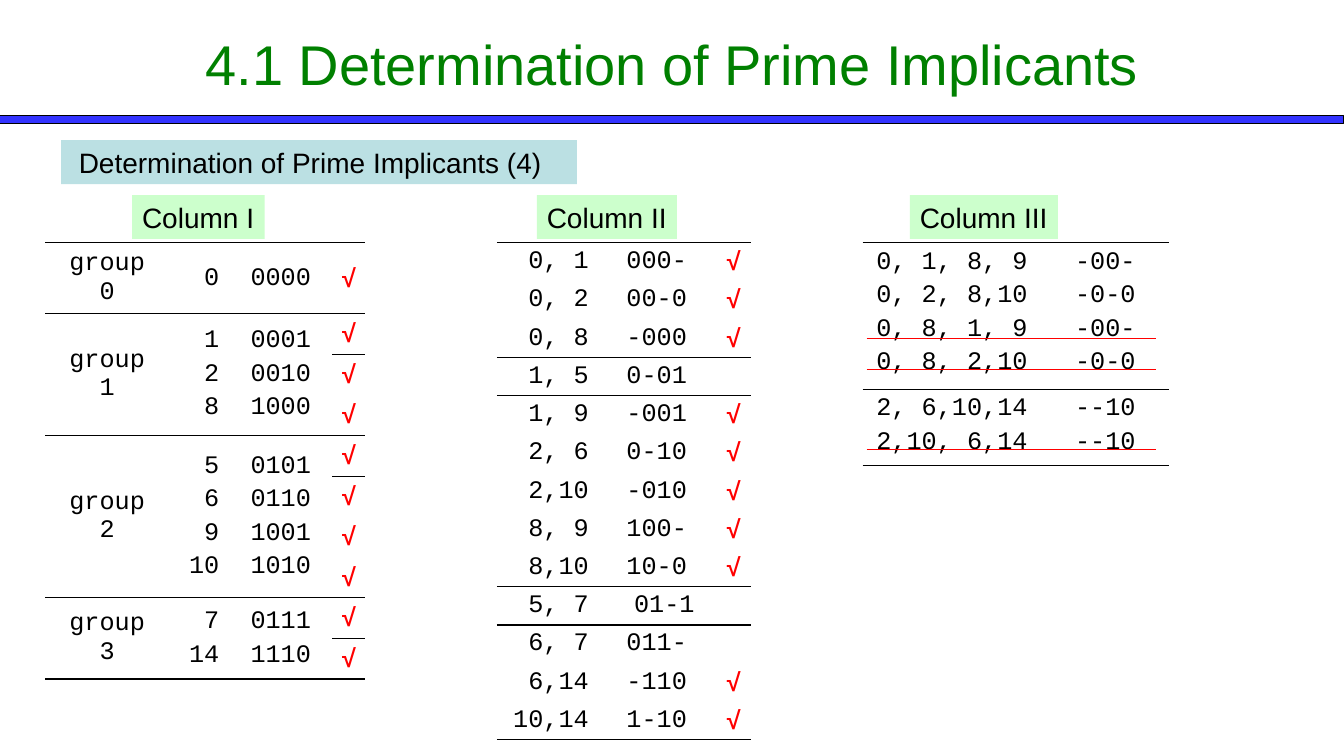
from lxml.etree import SubElement
from pptx import Presentation
from pptx.dml.color import RGBColor
from pptx.enum.shapes import MSO_CONNECTOR, MSO_SHAPE
from pptx.enum.text import MSO_ANCHOR, PP_ALIGN
from pptx.oxml import parse_xml
from pptx.oxml.ns import nsdecls, qn
from pptx.util import Cm, Pt

NO_GRID_STYLE = "{2D5ABB26-0587-4C30-8999-92F81FD0307C}"
LEFT, CENTER, RIGHT = PP_ALIGN.LEFT, PP_ALIGN.CENTER, PP_ALIGN.RIGHT


def color(value):
    return RGBColor.from_string(value)


def style_text(frame, size, value, align, font="Arial", bold=False, space=0):
    for paragraph in frame.paragraphs:
        paragraph.alignment = align
        paragraph.space_before = Pt(space)
        for span in paragraph.runs:
            span.font.name = font
            span.font.size = Pt(size)
            span.font.bold = bold
            span.font.color.rgb = color(value)


deck = Presentation()
deck.slide_width, deck.slide_height = Cm(33.87), Cm(19.05)
page = deck.slides.add_slide(deck.slide_layouts[6])

rule = page.shapes.add_shape(MSO_SHAPE.RECTANGLE, 0, Cm(2.91), deck.slide_width, Cm(0.21))
rule.shadow.inherit = False
rule.fill.solid()
rule.fill.fore_color.rgb = color("3333FF")
rule.line.color.rgb = color("000000")
rule.line.width = Pt(0.75)

title = page.shapes.add_textbox(Cm(4.23), 0, Cm(25.4), Cm(3.18))
title.text_frame.word_wrap = True
title.text_frame.vertical_anchor = MSO_ANCHOR.MIDDLE
title.text_frame.text = "4.1 Determination of Prime Implicants"
style_text(title.text_frame, 40, "008000", CENTER)

labels = [
    (" Determination of Prime Implicants (4)", 1.54, 3.53, 13, 1.11, "BBE0E3", True),
    ("Column I", 3.33, 4.92, 3.34, 1.1, "CCFFCC", False),
    ("Column II", 13.53, 4.92, 3.53, 1.1, "CCFFCC", False),
    ("Column III", 22.93, 4.92, 3.73, 1.1, "CCFFCC", False),
]
for text, left, top, width, height, fill, wrap in labels:
    label = page.shapes.add_textbox(Cm(left), Cm(top), Cm(width), Cm(height))
    label.fill.solid()
    label.fill.fore_color.rgb = color(fill)
    label.text_frame.word_wrap = wrap
    label.text_frame.text = text
    style_text(label.text_frame, 20, "000000", LEFT)

column_one = [
    [["group 0"], ["0"], ["0000"], ["√"]],
    [["group 1"], ["1\n2\n8"], ["0001\n0010\n1000"], ["√"] * 3],
    [["group 2"], ["5\n6\n9\n10"], ["0101\n0110\n1001\n1010"], ["√"] * 4],
    [["group 3"], ["7\n14"], ["0111\n1110"], ["√"] * 2],
]
column_two = [
    [["0, 1", "0, 2", "0, 8"], ["000-", "00-0", "-000"], ["√"] * 3],
    [["1, 5", "1, 9", "2, 6", "2,10", "8, 9", "8,10"],
     ["0-01", "-001", "0-10", "-010", "100-", "10-0"],
     [""] + ["√"] * 5],
    [["5, 7", "6, 7", "6,14", "10,14"],
     [" 01-1", "011-", "-110", "1-10"],
     ["", "", "√", "√"]],
]
column_three = [
    [["0, 1, 8, 9\n0, 2, 8,10\n0, 8, 1, 9\n0, 8, 2,10"], ["-00-\n-0-0\n-00-\n-0-0"]],
    [["2, 6,10,14\n2,10, 6,14"], ["--10\n--10"]],
]
grids = [
    (column_one, 1.14, [3.12, 1.52, 2.59, 0.84], [1.7] + [0.97] * 9,
     [CENTER, RIGHT, CENTER, CENTER], MSO_ANCHOR.MIDDLE, 0.13),
    (column_two, 12.52, [2.57, 2.92, 0.91], [0.92] * 13,
     [RIGHT, CENTER, RIGHT], MSO_ANCHOR.MIDDLE, 0.1),
    (column_three, 21.74, [4.5, 3.23], [3.68, 1.92],
     [CENTER, CENTER], MSO_ANCHOR.TOP, 0.13),
]
for groups, left, widths, heights, aligns, anchor, inset in grids:
    frame = page.shapes.add_table(len(heights), len(widths), Cm(left), Cm(6.12),
                                  Cm(sum(widths)), Cm(sum(heights)))
    table = frame.table
    table.first_row = table.horz_banding = False
    frame._element.find(".//" + qn("a:tableStyleId")).text = NO_GRID_STYLE
    for column, width in zip(table.columns, widths):
        column.width = Cm(width)
    for row, height in zip(table.rows, heights):
        row.height = Cm(height)

    first = 0
    for group in groups:
        last = first + max(len(texts) for texts in group) - 1
        for index, texts in enumerate(group):
            merged = first + len(texts) - 1 < last
            if merged:
                table.cell(first, index).merge(table.cell(last, index))
            for row in range(first, last + 1):
                cell = table.cell(row, index)
                borders = []
                if row == first:
                    borders.append("a:lnT")
                if row == last or merged and row == first:
                    borders.append("a:lnB")
                for side in borders:
                    border = SubElement(cell._tc.get_or_add_tcPr(), qn(side), w=str(Pt(1)))
                    solid = SubElement(border, qn("a:solidFill"))
                    SubElement(solid, qn("a:srgbClr"), val="000000")
                cell.fill.background()
            for row, text in enumerate(texts, first):
                cell = table.cell(row, index)
                cell.text = text
                cell.vertical_anchor = anchor
                cell.margin_top = cell.margin_bottom = Cm(inset if text else 0)
                check = text == "√"
                style_text(cell.text_frame, 18, "FF0000" if check else "000000", aligns[index],
                           "Arial" if check else "Courier New", check, 3.6)
        first = last + 1

for height in [8.53, 9.32, 11.33]:
    strike = page.shapes.add_connector(MSO_CONNECTOR.STRAIGHT, Cm(21.84), Cm(height),
                                       Cm(29.13), Cm(height))
    strike.line.color.rgb = color("FF0000")
    strike.line.width = Pt(0.75)
    strike._element.spPr.append(parse_xml("<a:effectLst %s/>" % nsdecls("a")))

deck.save("out.pptx")
